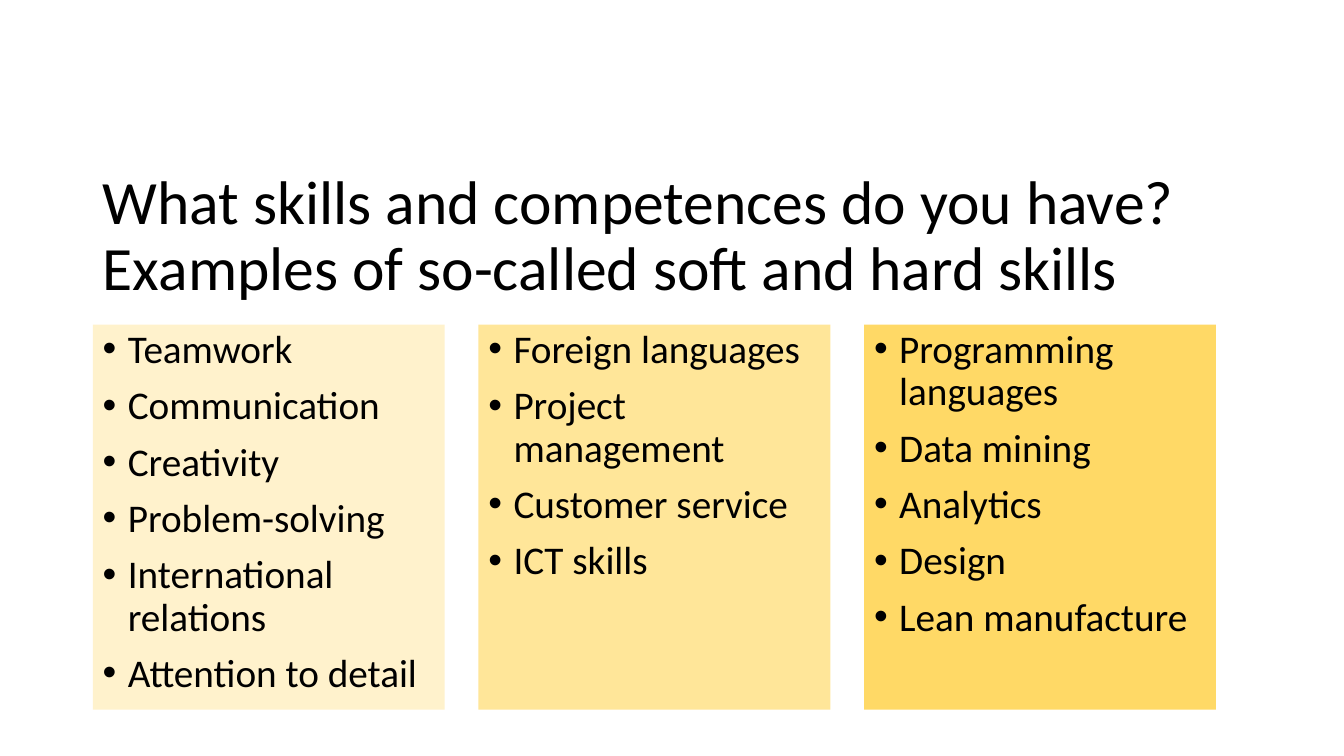
from dataclasses import dataclass

from lxml import etree
from pptx import Presentation
from pptx import util as u
from pptx.dml.color import RGBColor
from pptx.enum import text
from pptx.oxml.ns import qn

BLACK = RGBColor(0x00, 0x00, 0x00)
PALE_GOLD = RGBColor(0xFF, 0xF2, 0xCC)
LIGHT_GOLD = RGBColor(0xFF, 0xE6, 0x99)
GOLD = RGBColor(0xFF, 0xD9, 0x66)
FONT = "Calibri"

# Grid of three equal columns
LEFT = u.Inches(0.92)
COLUMN_WIDTH = u.Inches(3.49)
COLUMN_STEP = u.Inches(3.825)
PANEL_TOP = u.Inches(3.22)
PANEL_HEIGHT = u.Inches(3.82)
INDENT = u.Inches(0.25)


@dataclass(frozen=True)
class SkillPanel:
    fill: RGBColor
    skills: tuple[str, ...]


PANELS = (
    SkillPanel(PALE_GOLD, ("Teamwork", "Communication", "Creativity", "Problem-solving",
                           "International relations", "Attention to detail")),
    SkillPanel(LIGHT_GOLD, ("Foreign languages", "Project management",
                            "Customer service", "ICT skills")),
    SkillPanel(GOLD, ("Programming languages", "Data mining", "Analytics",
                      "Design", "Lean manufacture")),
)


def style_paragraph(para, size: int) -> None:
    para.alignment = text.PP_ALIGN.LEFT
    para.line_spacing = 0.9
    para.font.name = FONT
    para.font.size = u.Pt(size)
    para.font.color.rgb = BLACK


def add_bullet(para) -> None:
    properties = para._p.get_or_add_pPr()
    properties.set("marL", str(INDENT))
    properties.set("indent", str(-INDENT))
    etree.SubElement(properties, qn("a:buFont")).set("typeface", "Arial")
    etree.SubElement(properties, qn("a:buChar")).set("char", "•")


def set_title(page, wording: str) -> None:
    title = page.shapes.title
    title.left, title.top = LEFT, u.Inches(1.63)
    title.width, title.height = u.Inches(11.25), u.Inches(1.45)
    frame = title.text_frame
    frame.text = wording
    frame.word_wrap = True
    frame.auto_size = text.MSO_AUTO_SIZE.NONE
    frame.vertical_anchor = text.MSO_ANCHOR.MIDDLE
    style_paragraph(frame.paragraphs[0], 44)


def add_panel(page, column: int, panel: SkillPanel) -> None:
    box = page.shapes.add_textbox(LEFT + column * COLUMN_STEP, PANEL_TOP,
                                  COLUMN_WIDTH, PANEL_HEIGHT)
    box.fill.solid()
    box.fill.fore_color.rgb = panel.fill
    frame = box.text_frame
    frame.word_wrap = True
    frame.text = "\n".join(panel.skills)
    for index, para in enumerate(frame.paragraphs):
        add_bullet(para)
        style_paragraph(para, 28)
        para.space_before = u.Pt(10 if index else 0)


def main() -> None:
    deck = Presentation()
    deck.slide_width, deck.slide_height = u.Inches(13.33), u.Inches(7.5)
    page = deck.slides.add_slide(deck.slide_layouts[5])

    # Heading on two lines
    set_title(page, "What skills and competences do you have?\v"
                    "Examples of so-called soft and hard skills")

    # Skill lists, from soft to hard
    for column, panel in enumerate(PANELS):
        add_panel(page, column, panel)

    deck.save("out.pptx")


if __name__ == "__main__":
    main()
